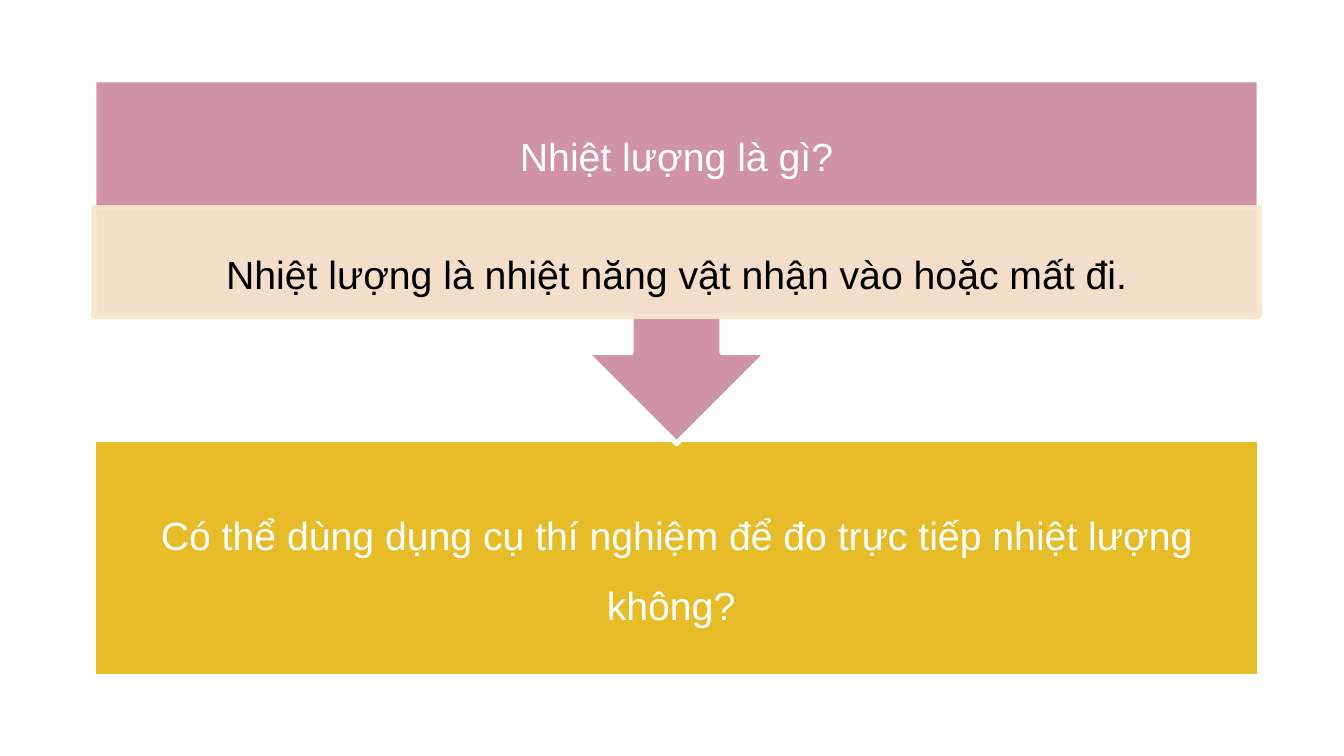
import dataclasses

import lxml.etree
import pptx
import pptx.dml.color
import pptx.enum.shapes
import pptx.enum.text
import pptx.oxml.ns
import pptx.shapes.autoshape
import pptx.shapes.base
import pptx.slide
import pptx.util
from pptx.util import Inches


@dataclasses.dataclass(frozen=True)
class Theme:
    white: str = "FFFFFF"
    black: str = "000000"
    pink: str = "D092A7"
    gold: str = "E7BC29"
    cream: str = "F6E7CD"
    font: str = "Arial"
    text_size: float = 28
    line_width: float = 3.78


THEME = Theme()
LEFT = 0.93
WIDTH = 11.56


@dataclasses.dataclass(frozen=True)
class Block:
    top: float
    height: float
    fill: str
    line: str = THEME.white
    text: str = ""
    text_color: str = THEME.white
    vertical_margin: float = 0.22
    opacity: int = 100
    preset: pptx.enum.shapes.MSO_SHAPE = pptx.enum.shapes.MSO_SHAPE.RECTANGLE
    rotation: float = 0


@dataclasses.dataclass(frozen=True)
class Label:
    top: float
    height: float
    text: str


def write_text(
    shape: pptx.shapes.base.BaseShape,
    text: str,
    *,
    color: str = THEME.white,
    vertical_margin: float = 0.22,
) -> None:
    frame = shape.text_frame
    frame.word_wrap = True
    frame.vertical_anchor = pptx.enum.text.MSO_ANCHOR.MIDDLE
    frame.margin_left = frame.margin_right = Inches(0.22)
    frame.margin_top = frame.margin_bottom = Inches(vertical_margin)
    paragraph = frame.paragraphs[0]
    paragraph.alignment = pptx.enum.text.PP_ALIGN.CENTER
    paragraph.line_spacing = 1.5
    paragraph.space_after = pptx.util.Pt(10)
    run = paragraph.add_run()
    run.text = text
    run.font.name = THEME.font
    run.font.size = pptx.util.Pt(THEME.text_size)
    run.font.color.rgb = pptx.dml.color.RGBColor.from_string(color)


def set_opacity(shape: pptx.shapes.autoshape.Shape, percent: int) -> None:
    for color in shape.fill._xPr.iter(pptx.oxml.ns.qn("a:srgbClr")):
        alpha = lxml.etree.SubElement(color, pptx.oxml.ns.qn("a:alpha"))
        alpha.set("val", str(percent * 1000))


def draw_block(slide: pptx.slide.Slide, block: Block) -> None:
    shape = slide.shapes.add_shape(
        block.preset, Inches(LEFT), Inches(block.top), Inches(WIDTH), Inches(block.height)
    )
    shape.rotation = block.rotation
    shape.shadow.inherit = False
    shape.fill.solid()
    shape.fill.fore_color.rgb = pptx.dml.color.RGBColor.from_string(block.fill)
    shape.line.color.rgb = pptx.dml.color.RGBColor.from_string(block.line)
    shape.line.width = pptx.util.Pt(THEME.line_width)
    if block.opacity < 100:
        set_opacity(shape, block.opacity)
    if block.text:
        write_text(
            shape, block.text, color=block.text_color, vertical_margin=block.vertical_margin
        )


def draw_label(slide: pptx.slide.Slide, label: Label) -> None:
    shape = slide.shapes.add_textbox(
        Inches(LEFT), Inches(label.top), Inches(WIDTH), Inches(label.height)
    )
    write_text(shape, label.text)


FOLLOW_UP = Block(
    top=4.36,
    height=2.35,
    fill=THEME.gold,
    text="Có thể dùng dụng cụ thí nghiệm để đo trực tiếp nhiệt lượng không? ",
)
CALLOUT = Block(
    top=0.79,
    height=3.61,
    fill=THEME.pink,
    preset=pptx.enum.shapes.MSO_SHAPE.UP_ARROW_CALLOUT,
    rotation=180,
)
QUESTION = Label(top=0.79, height=1.27, text="Nhiệt lượng là gì?")
ANSWER = Block(
    top=2.06,
    height=1.08,
    fill=THEME.cream,
    line=THEME.cream,
    text="Nhiệt lượng là nhiệt năng vật nhận vào hoặc mất đi.",
    text_color=THEME.black,
    vertical_margin=0.04,
    opacity=90,
)


def main() -> None:
    presentation = pptx.Presentation()
    presentation.slide_width = Inches(13.33)
    presentation.slide_height = Inches(7.5)
    slide = presentation.slides.add_slide(presentation.slide_layouts.get_by_name("Blank"))
    draw_block(slide, FOLLOW_UP)
    draw_block(slide, CALLOUT)
    draw_label(slide, QUESTION)
    draw_block(slide, ANSWER)
    presentation.save("out.pptx")


if __name__ == "__main__":
    main()
